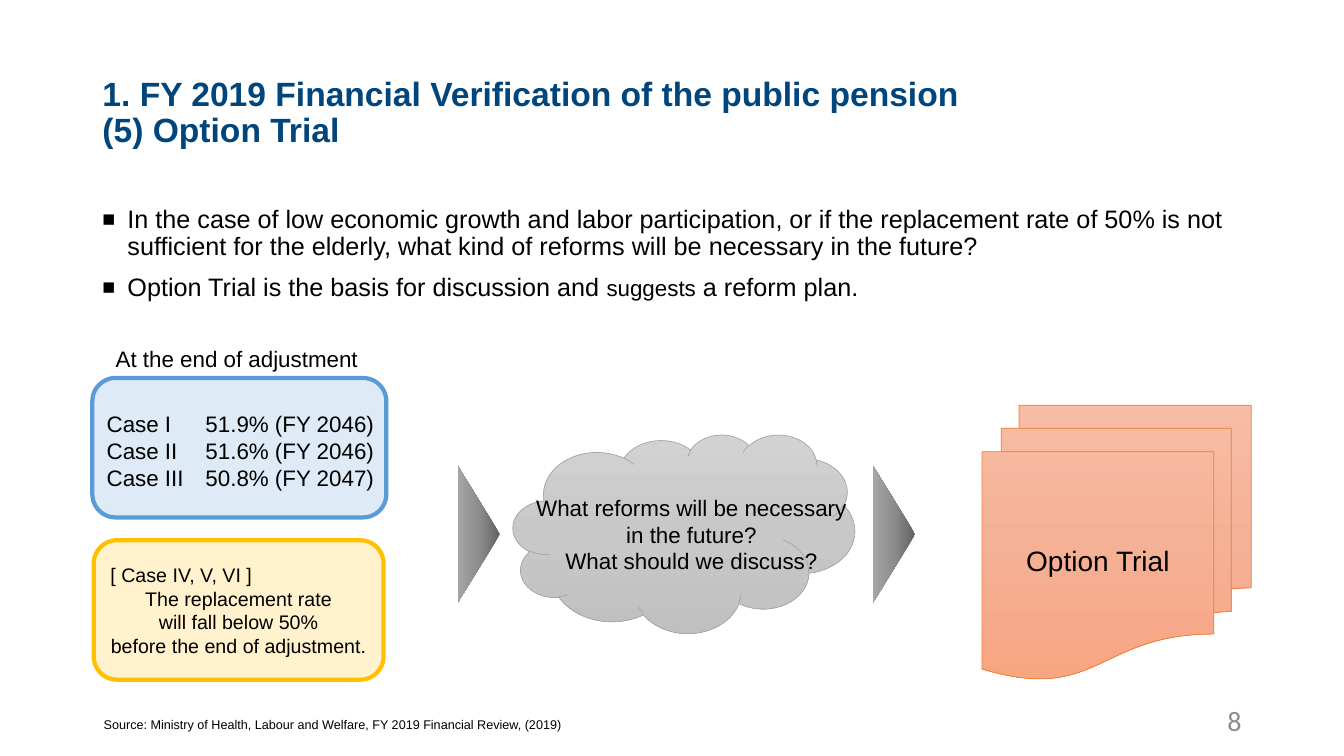
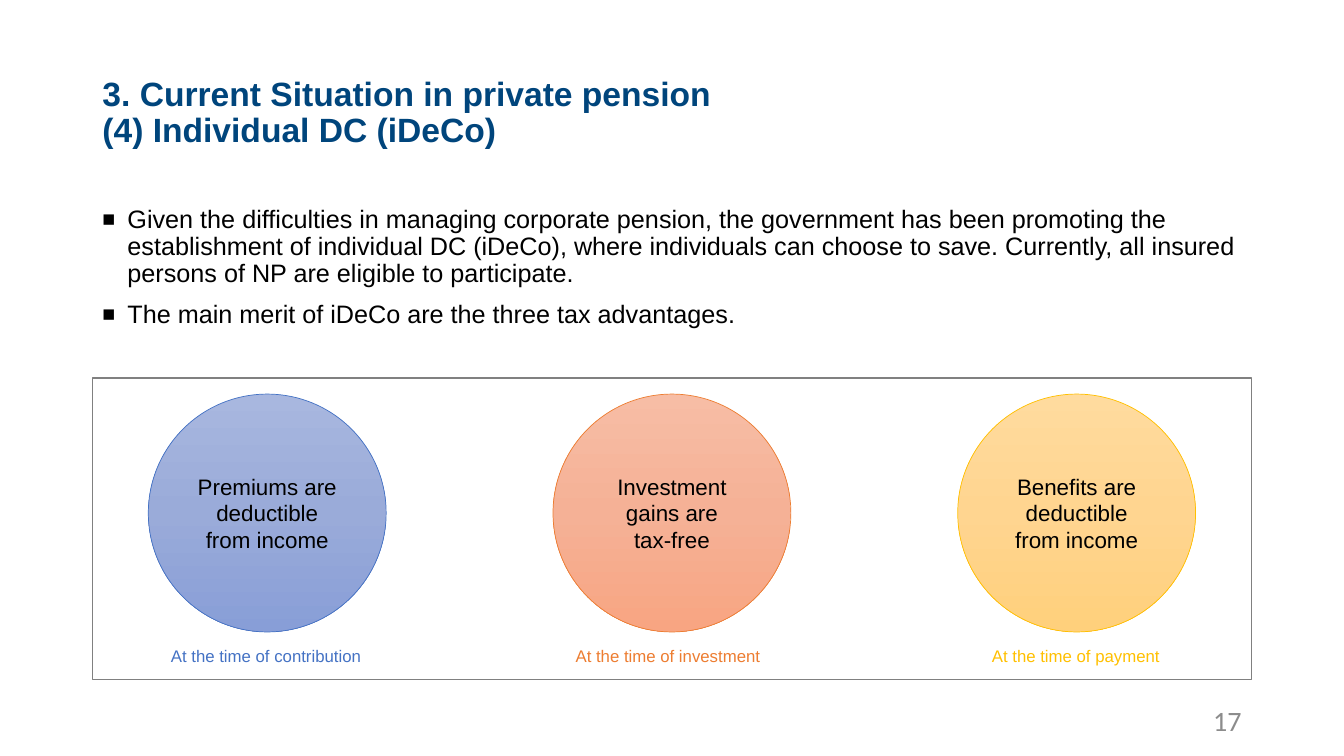
from copy import deepcopy

from lxml import etree
from pptx import Presentation
from pptx import util as u
from pptx.dml.color import RGBColor
from pptx.enum import shapes, text
from pptx.oxml.ns import qn

NAVY = RGBColor(0x00, 0x45, 0x7C)
BLACK = RGBColor(0x00, 0x00, 0x00)
GREY = RGBColor(0x8C, 0x8C, 0x8C)
FRAME = RGBColor(0x80, 0x80, 0x80)
SILVER = RGBColor(0xA5, 0xA5, 0xA5)
SKY = RGBColor(0x5B, 0x9B, 0xD5)
PALE_SKY = RGBColor(0xDE, 0xEB, 0xF7)
BLUE = RGBColor(0x44, 0x72, 0xC4)
ORANGE = RGBColor(0xED, 0x7D, 0x31)
GOLD = RGBColor(0xFF, 0xC0, 0x00)
PALE_GOLD = RGBColor(0xFF, 0xF2, 0xCC)

# Vertical gradients: colours at 0, 50 and 100 percent
DARK_FADE = (RGBColor(0x62, 0x62, 0x62), GREY, RGBColor(0xA6, 0xA6, 0xA6))
SILVER_FADE = (RGBColor(0xD2, 0xD2, 0xD2), RGBColor(0xC8, 0xC8, 0xC8), RGBColor(0xC0, 0xC0, 0xC0))
BLUE_FADE = (RGBColor(0xA8, 0xB7, 0xDF), RGBColor(0x9A, 0xAB, 0xD9), RGBColor(0x88, 0x9E, 0xD7))
ORANGE_FADE = (RGBColor(0xF7, 0xBD, 0xA5), RGBColor(0xF5, 0xB1, 0x96), RGBColor(0xF8, 0xA5, 0x82))
GOLD_FADE = (RGBColor(0xFF, 0xDB, 0x9E), RGBColor(0xFF, 0xD5, 0x90), RGBColor(0xFF, 0xD0, 0x7C))

LEFT, CENTER, RIGHT = text.PP_ALIGN.LEFT, text.PP_ALIGN.CENTER, text.PP_ALIGN.RIGHT
SHAPE = shapes.MSO_SHAPE

# Grid of 80 columns by 45 rows; content spans 69 columns from MARGIN
CELL = u.Inches(1) / 6
COLS, ROWS = 80, 45
MARGIN, SPAN = 5.5, 69
DIAGRAM_TOP = 22.5


def cells(*counts):
    return [u.Emu(round(n * CELL)) for n in counts]


class Deck:
    def __init__(self):
        self.prs = Presentation()
        self.prs.slide_width, self.prs.slide_height = cells(COLS, ROWS)
        self.s = None

    def slide(self, title, number):
        """Start a slide with its title and page number."""
        self.s = self.prs.slides.add_slide(self.prs.slide_layouts[5])
        sp = self.s.shapes.title
        sp.left, sp.top, sp.width, sp.height = cells(MARGIN, 2.4, SPAN, 8.7)
        tf = sp.text_frame
        tf.auto_size = text.MSO_AUTO_SIZE.NONE
        tf.vertical_anchor = text.MSO_ANCHOR.MIDDLE
        self.set_text(tf, [title], 24, NAVY, LEFT, bold=True)
        tf.paragraphs[0].line_spacing = 0.9
        page = self.label((56.5, 41.7, 18, 2.4), [number], 20, GREY, RIGHT, wrap=True, font="Calibri")
        page.text_frame.vertical_anchor = text.MSO_ANCHOR.MIDDLE

    def set_text(self, tf, lines, size, color=BLACK, align=LEFT, bold=False, font="Arial"):
        """Fill a text frame, one paragraph a line; a line may be a list of (text, size) runs."""
        for i, line in enumerate(lines):
            p = tf.paragraphs[0] if i == 0 else tf.add_paragraph()
            p.alignment = align
            if isinstance(line, str):
                p.text = line
            else:
                for words, _ in line:
                    p.add_run().text = words
            for j, r in enumerate(p.runs):
                r.font.size = u.Pt(size if isinstance(line, str) else line[j][1])
                r.font.name, r.font.bold = font, bold
                r.font.color.rgb = color

    def label(self, box, lines, size, color=BLACK, align=LEFT, wrap=False, font="Arial"):
        sp = self.s.shapes.add_textbox(*cells(*box))
        sp.text_frame.word_wrap = wrap
        self.set_text(sp.text_frame, lines, size, color, align, font=font)
        return sp

    def bullets(self, height, lines):
        sp = self.label((MARGIN, 12, SPAN, height), lines, 18, wrap=True)
        for i, p in enumerate(sp.text_frame.paragraphs):
            pPr = p._p.get_or_add_pPr()
            pPr.set("marL", str(u.Inches(0.25)))
            pPr.set("indent", str(-u.Inches(0.25)))
            etree.SubElement(pPr, qn("a:buSzPct")).set("val", "85000")
            etree.SubElement(pPr, qn("a:buFont")).set("typeface", "Arial")
            etree.SubElement(pPr, qn("a:buChar")).set("char", "■")
            p.line_spacing = 0.9
            if i:
                p.space_before = u.Pt(10)

    def shape(self, kind, box, fill=None, line=None, width=0.5, lines=(), size=16):
        """Add a preset shape; fill is a colour, a tuple of gradient colours or None."""
        sp = self.s.shapes.add_shape(kind, *cells(*box))
        sp.shadow.inherit = False
        if fill is None:
            sp.fill.background()
        elif isinstance(fill, RGBColor):
            sp.fill.solid()
            sp.fill.fore_color.rgb = fill
        else:
            self.fade(sp, fill)
        if line is None:
            sp.line.fill.background()
        else:
            sp.line.color.rgb = line
            sp.line.width = u.Pt(width)
        if lines:
            sp.text_frame.word_wrap = True
            sp.text_frame.vertical_anchor = text.MSO_ANCHOR.MIDDLE
            self.set_text(sp.text_frame, lines, size, align=CENTER)
        return sp

    def fade(self, sp, colors):
        sp.fill.gradient()
        sp.fill.gradient_angle = 270
        stops = sp._element.spPr.find(".//" + qn("a:gsLst"))
        stops.append(deepcopy(stops[0]))
        for i, (stop, color) in enumerate(zip(sp.fill.gradient_stops, colors)):
            stop.position = i / 2
            stop.color.rgb = color


def option_trial(deck):
    deck.slide("1. FY 2019 Financial Verification of the public pension\v(5) Option Trial", "8")
    deck.bullets(28.56, [
        "In the case of low economic growth and labor participation, or if the replacement rate "
        "of 50% is not sufficient for the elderly, what kind of reforms will be necessary in the future?",
        [("Option Trial is the basis for discussion and ", 18), ("suggests", 16), (" a reform plan.", 18)],
    ])

    # Outcomes by case
    deck.label((6.3, 20.28, 15.84, 2.22), ["At the end of adjustment"], 16)
    deck.shape(SHAPE.ROUNDED_RECTANGLE, (MARGIN, DIAGRAM_TOP, 17.5, 8.3), PALE_SKY, SKY, 3)
    deck.label((5.76, 24.12, 5.88, 5.46), ["Case I", "Case II", "Case III"], 16)
    deck.label((11.64, 24.12, 11.34, 5.46), ["51.9% (FY 2046)", "51.6% (FY 2046)", "50.8% (FY 2047)"], 16)
    sp = deck.shape(SHAPE.ROUNDED_RECTANGLE, (5.58, 32.16, 17.25, 8.3), PALE_GOLD, GOLD, 3, [
        "[ Case IV, V, VI ]", "The replacement rate", "will fall below 50%", "before the end of adjustment."], 14)
    sp.text_frame.paragraphs[0].alignment = LEFT

    # Flow: question, then option trial
    for left in (24.42, 49.14):
        deck.shape(SHAPE.ISOSCELES_TRIANGLE, (left, 30.54, 8.16, 2.52), DARK_FADE).rotation = 90
    deck.shape(SHAPE.CLOUD, (30.54, 25.86, 20.34, 11.82), SILVER_FADE, SILVER)
    deck.label((29.58, 29.1, 23.16, 5.46), [
        "What reforms will be necessary", "in the future?", "What should we discuss?"], 16, align=CENTER, wrap=True)
    deck.shape(SHAPE.FLOWCHART_MULTIDOCUMENT, (58.46, 24.12, 16.02, 16.32), ORANGE_FADE, ORANGE,
               lines=["Option Trial"], size=20)

    deck.label((5.58, 42.36, 28.74, 1.5), [
        "Source: Ministry of Health, Labour and Welfare, FY 2019 Financial Review, (2019)"], 9)


def individual_dc(deck):
    deck.slide("3. Current Situation in private pension\v(4) Individual DC (iDeCo)", "17")
    deck.bullets(9.6, [
        "Given the difficulties in managing corporate pension, the government has been promoting the "
        "establishment of individual DC (iDeCo), where individuals can choose to save. Currently, "
        "all insured persons of NP are eligible to participate.",
        "The main merit of iDeCo are the three tax advantages.",
    ])

    # Three tax advantages, each with a caption centred below
    deck.shape(SHAPE.RECTANGLE, (MARGIN, DIAGRAM_TOP, SPAN, 17.94), None, FRAME, 0.75)
    advantages = [
        (["Premiums are deductible from income"], "At the time of contribution", 12.66, BLUE_FADE, BLUE),
        (["Investment gains are", "tax-free"], "At the time of investment", 12.66, ORANGE_FADE, ORANGE),
        (["Benefits are deductible from income"], "At the time of payment", 11.28, GOLD_FADE, GOLD),
    ]
    diameter, pitch = 14.16, 24.09
    for i, (lines, caption, width, fade, color) in enumerate(advantages):
        center = COLS / 2 + (i - 1) * pitch
        deck.shape(SHAPE.OVAL, (center - diameter / 2, 23.46, diameter, diameter), fade, color, lines=lines)
        deck.label((center - width / 2, 38.16, width, 1.8), [caption], 12, color, wrap=True)


def main():
    deck = Deck()
    option_trial(deck)
    individual_dc(deck)
    deck.prs.save("out.pptx")


if __name__ == "__main__":
    main()
